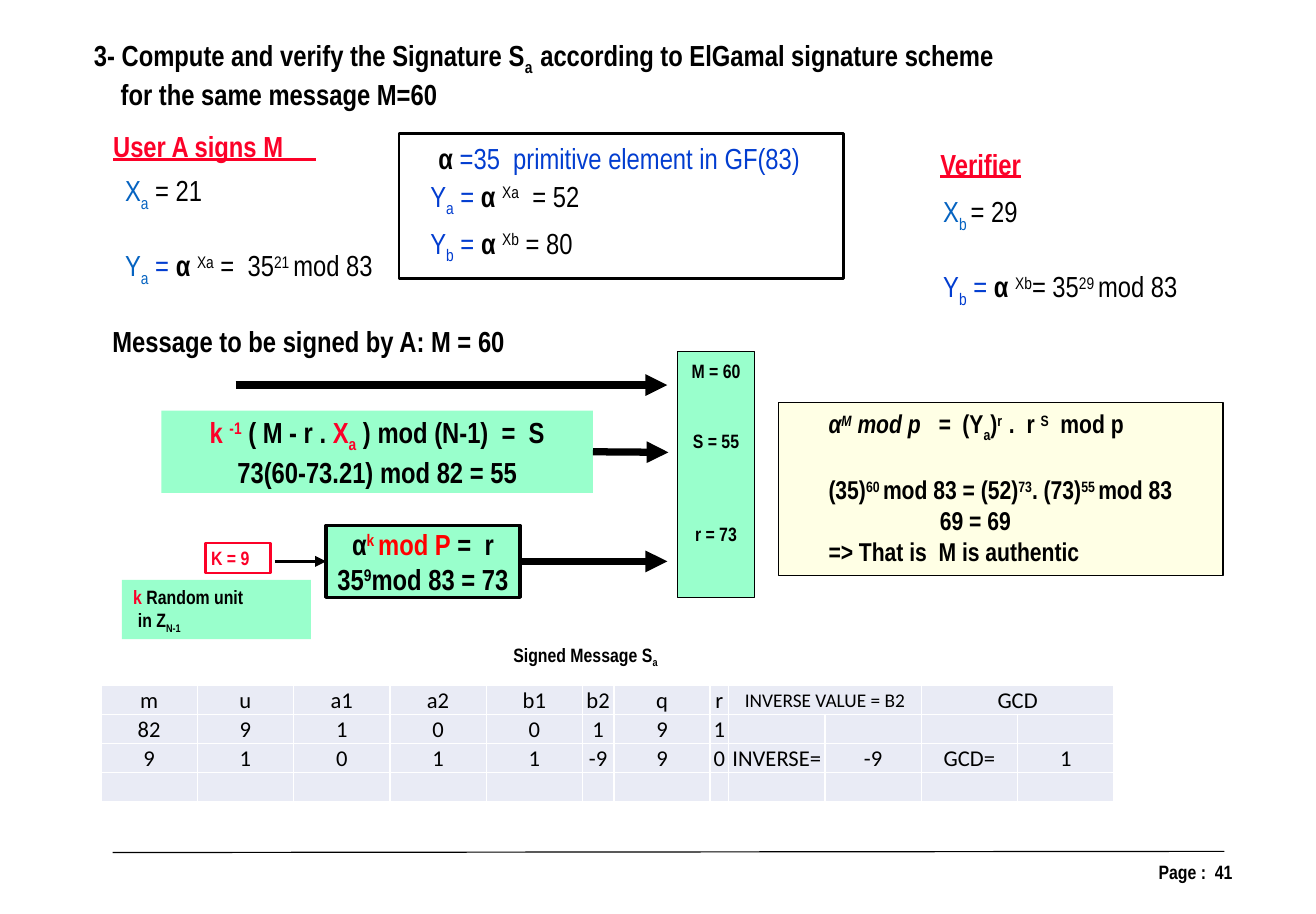
from dataclasses import dataclass

from lxml import etree
from pptx import Presentation
from pptx.dml.color import RGBColor
from pptx.enum.shapes import MSO_CONNECTOR, MSO_SHAPE
from pptx.enum.text import MSO_ANCHOR, MSO_AUTO_SIZE, PP_ALIGN
from pptx.oxml.ns import qn
from pptx.util import Inches, Pt

LEFT, MID, RIGHT = PP_ALIGN.LEFT, PP_ALIGN.CENTER, PP_ALIGN.RIGHT
TOP, CENTER = MSO_ANCHOR.TOP, MSO_ANCHOR.MIDDLE
RECT, STRAIGHT = MSO_SHAPE.RECTANGLE, MSO_CONNECTOR.STRAIGHT
NO_FIT = MSO_AUTO_SIZE.NONE


@dataclass(frozen=True)
class Theme:
    black: RGBColor = RGBColor.from_string("000000")
    white: RGBColor = RGBColor.from_string("FFFFFF")
    red: RGBColor = RGBColor.from_string("FC0128")
    pure: RGBColor = RGBColor.from_string("FF0000")
    blue: RGBColor = RGBColor.from_string("023DD0")
    link: RGBColor = RGBColor.from_string("0563C1")
    mint: RGBColor = RGBColor.from_string("99FFCC")
    cream: RGBColor = RGBColor.from_string("FFFFE5")
    pale: RGBColor = RGBColor.from_string("E9EBF5")
    font: str = "Arial Narrow"
    grid: str = "Calibri"
    big: int = 18
    proof: int = 16
    cell: int = 14
    small: int = 12


T = Theme()
INK = {"r": T.red, "p": T.pure, "n": T.blue, "l": T.link}

deck = Presentation()
deck.slide_width, deck.slide_height = Inches(11.34), Inches(7.88)
slide = deck.slides.add_slide(deck.slide_layouts[5])
shapes = slide.shapes


def write(frame, lines, size=T.big, bold=True, align=LEFT, anchor=CENTER,
          inset=(0.1, 0.05), gaps=(), dents=()):
    """Fill a frame; each run is (text, flags).

    Flags: _ sub, ^ super, b bold, i italic, u underline, r p n l colour.
    gaps holds points before, dents inches of indent, by paragraph number.
    """
    frame.word_wrap, frame.auto_size = True, NO_FIT
    frame.vertical_anchor = anchor
    frame.margin_left = frame.margin_right = Inches(inset[0])
    frame.margin_top = frame.margin_bottom = Inches(inset[1])
    gaps, dents = dict(gaps), dict(dents)
    for i, line in enumerate(lines):
        para = frame.paragraphs[0] if i == 0 else frame.add_paragraph()
        para.alignment, para.space_before = align, Pt(gaps.get(i, 0))
        if i in dents:
            para._p.get_or_add_pPr().set("marL", str(Inches(dents[i])))
        font = para.font
        font.name, font.size, font.bold = T.font, Pt(size), bold
        font.color.rgb = T.black
        for text, flags in line:
            run = para.add_run()
            run.text = text
            for flag in flags:
                if flag in INK:
                    run.font.color.rgb = INK[flag]
                elif flag in "_^":
                    shift = "-25000" if flag == "_" else "30000"
                    run.font._element.set("baseline", shift)
                elif flag == "b":
                    run.font.bold = True
                elif flag == "i":
                    run.font.italic = True
                else:
                    run.font.underline = True


def block(at, fill, edge=None, weight=0.75):
    """Add a flat rectangle."""
    rect = shapes.add_shape(RECT, *map(Inches, at))
    rect.shadow.inherit = False
    rect.fill.solid()
    rect.fill.fore_color.rgb = fill
    if edge is None:
        rect.line.fill.background()
    else:
        rect.line.color.rgb, rect.line.width = edge, Pt(weight)
    return rect


# Title
title = shapes.title
title.left, title.top, title.width, title.height = map(Inches, (0.71, 0.27, 8.41, 0.71))
write(title.text_frame, [
    [("3- Compute and verify the Signature S", ""), ("a  ", "_"),
     ("according to ElGamal signature scheme", "")],
    [("for the same message M=60", "")]], anchor=TOP, dents={1: 0.23})

# Keys of both users
block((3.44, 1.15, 3.83, 1.25), T.white, T.black, 1.5)
alpha = ("α ", "b")
notes = [
    ((3.68, 1.16, 3.5, 0.41), [[alpha, ("=35  primitive element in GF(83)", "n")]]),
    ((3.61, 1.5, 3.16, 0.41), [[("Y", "n"), ("a", "n_"), (" = ", "n"), alpha,
                                ("Xa", "^"), ("  = 52", "")]]),
    ((3.61, 1.91, 3.41, 0.41), [[("Y", "n"), ("b", "n_"), (" = ", "n"), alpha,
                                 ("Xb", "^"), (" = 80", "")]]),
    ((0.98, 1.48, 2.5, 1.01), [
        [("X", "l"), ("a", "l_"), (" = 21", "")],
        [("Y", "l"), ("a", "l_"), (" = ", "n"), alpha, ("Xa", "^"),
         (" =  35", ""), ("21 ", "^"), ("mod 83", "")]]),
    ((8.03, 1.66, 2.4, 1.01), [
        [("X", "l"), ("b ", "l_"), ("= 29", "")],
        [("Y", "n"), ("b", "n_"), (" = ", "n"), alpha, ("Xb", "^"),
         ("= 35", ""), ("29 ", "^"), ("mod 83", "")]]),
]
for at, lines in notes:
    write(shapes.add_textbox(*map(Inches, at)).text_frame, lines,
          bold=False, gaps={1: 22})

# Headings, caption and page number
labels = [
    ((0.39, 1.06, 2.92, 0.4), [("User A signs M     ", "ru")], T.big, MID),
    ((6.99, 1.21, 2.92, 0.4), [("Verifier", "ru")], T.big, MID),
    ((0.87, 2.74, 3.68, 0.4), [("Message to be signed by A: M = 60", "")], T.big, LEFT),
    ((3.94, 5.5, 2.21, 0.31), [("Signed Message S", ""), ("a", "_")], T.small, MID),
    ((8.14, 7.36, 2.58, 0.31), [("Page :  41", "")], T.small, RIGHT),
]
for at, line, size, align in labels:
    write(shapes.add_textbox(*map(Inches, at)).text_frame, [line], size, align=align)

# Signing steps
sign = block((1.39, 3.54, 3.72, 0.71), T.mint)
write(sign.text_frame, [
    [("k ", "r"), ("-1", "r^"), (" ( M - r . ", ""), ("X", "r"), ("a", "r_"),
     (" ) mod (N-1)  =  S", "")],
    [("73(60-73.21) mod 82 = 55", "")]], align=MID)

power = block((2.81, 4.53, 1.67, 0.62), T.mint, T.black, 2.25)
write(power.text_frame, [
    [("α", ""), ("k ", "p^"), ("mod P", "p"), (" =  r", "")],
    [("35", ""), ("9", "^"), ("mod 83 = 73", "")]], align=MID, inset=(0.05, 0))

key = block((1.77, 4.68, 0.56, 0.26), T.white, T.red, 1.5)
write(key.text_frame, [[("K = 9", "r")]], T.small, inset=(0.05, 0))

unit = block((1.05, 5, 1.63, 0.51), T.mint)
write(unit.text_frame, [[("k", "r"), (" Random unit", "")],
                        [("in Z", ""), ("N-1", "_")]], T.small, dents={1: 0.04})

packet = block((5.84, 3.03, 0.66, 2.12), T.mint, T.black)
write(packet.text_frame, [[("M = 60", "")], [("S = 55", "")], [("r = 73", "")]],
      T.small, align=MID, anchor=TOP, inset=(0.05, 0.07), gaps={1: 29, 2: 43})

# Check by the verifier
check = block((6.71, 3.47, 3.83, 1.49), T.cream, T.black)
write(check.text_frame, [
    [("α", "i"), ("M", "i^"), (" mod p   = ", "i"), (" (Y", ""), ("a", "_"), (")", ""),
     ("r  ", "^"), (".  r ", ""), ("S", "^"), ("  mod p", "")],
    [("(35)", ""), ("60 ", "^"), ("mod 83 = (52)", ""), ("73", "^"), (". (73)", ""),
     ("55 ", "^"), ("mod 83", "")],
    [("69 = 69", "")],
    [("=> That is  M is authentic", "")]],
    T.proof, anchor=TOP, inset=(0.43, 0.05), gaps={1: 19}, dents={2: 0.96})

# Arrows and footer rule: ends, weight, arrowhead, joined start and end
links = [
    ((2.03, 3.32, 5.75, 3.32), 4.5, True, None, None),
    ((5.11, 3.9, 5.76, 3.9), 4.5, True, sign, None),
    ((4.48, 4.84, 5.75, 4.84), 4.5, True, power, None),
    ((2.37, 4.84, 2.81, 4.84), 2.25, True, None, power),
    ((0.97, 7.35, 10.55, 7.34), 0.75, False, None, None),
]
for ends, weight, head, start, stop in links:
    link = shapes.add_connector(STRAIGHT, *map(Inches, ends))
    link.line.color.rgb, link.line.width = T.black, Pt(weight)
    if head:
        etree.SubElement(link.line._get_or_add_ln(), qn("a:tailEnd")).set("type", "triangle")
    etree.SubElement(link._element.spPr, qn("a:effectLst"))
    if start is not None:
        link.begin_connect(start, 3)
    if stop is not None:
        link.end_connect(stop, 1)

# Table of the inverse
rows = [
    ["m", "u", "a1", "a2", "b1", "b2", "q", "r", "INVERSE VALUE = B2", "", "GCD", ""],
    ["82", "9", "1", "0", "0", "1", "9", "1", "", "", "", ""],
    ["9", "1", "0", "1", "1", "-9", "9", "0", "INVERSE=", "-9", "GCD=", "1"],
    [""] * 12,
]
table = shapes.add_table(4, 12, *map(Inches, (0.87, 5.91, 8.76, 0.99))).table
table.first_row = table.horz_banding = False
for c, column in enumerate(table.columns):
    column.width = Inches({5: 0.27, 7: 0.16}.get(c, 0.83))
for r, row in enumerate(rows):
    table.rows[r].height = Inches(0.25)
    for c, text in enumerate(row):
        cell = table.cell(r, c)
        cell.margin_left = cell.margin_right = cell.margin_top = Inches(0.01)
        cell.margin_bottom = 0
        cell.vertical_anchor = CENTER
        for side in ("lnL", "lnR", "lnT", "lnB"):
            edge = etree.SubElement(cell._tc.get_or_add_tcPr(), qn(f"a:{side}"), w=str(Pt(1)))
            paint = etree.SubElement(edge, qn("a:solidFill"))
            etree.SubElement(paint, qn("a:srgbClr"), val=str(T.white))
        cell.fill.solid()
        cell.fill.fore_color.rgb = T.pale
        para = cell.text_frame.paragraphs[0]
        size = T.small if text.startswith("INVERSE V") else T.cell
        para.alignment = MID
        para.font.name, para.font.size = T.grid, Pt(size)
        para.font.color.rgb = T.black
        if text:
            para.add_run().text = text
        else:
            para._p.get_or_add_endParaRPr().set("sz", str(size * 100))
for c in (8, 10):
    table.cell(0, c).merge(table.cell(0, c + 1))

deck.save("out.pptx")
